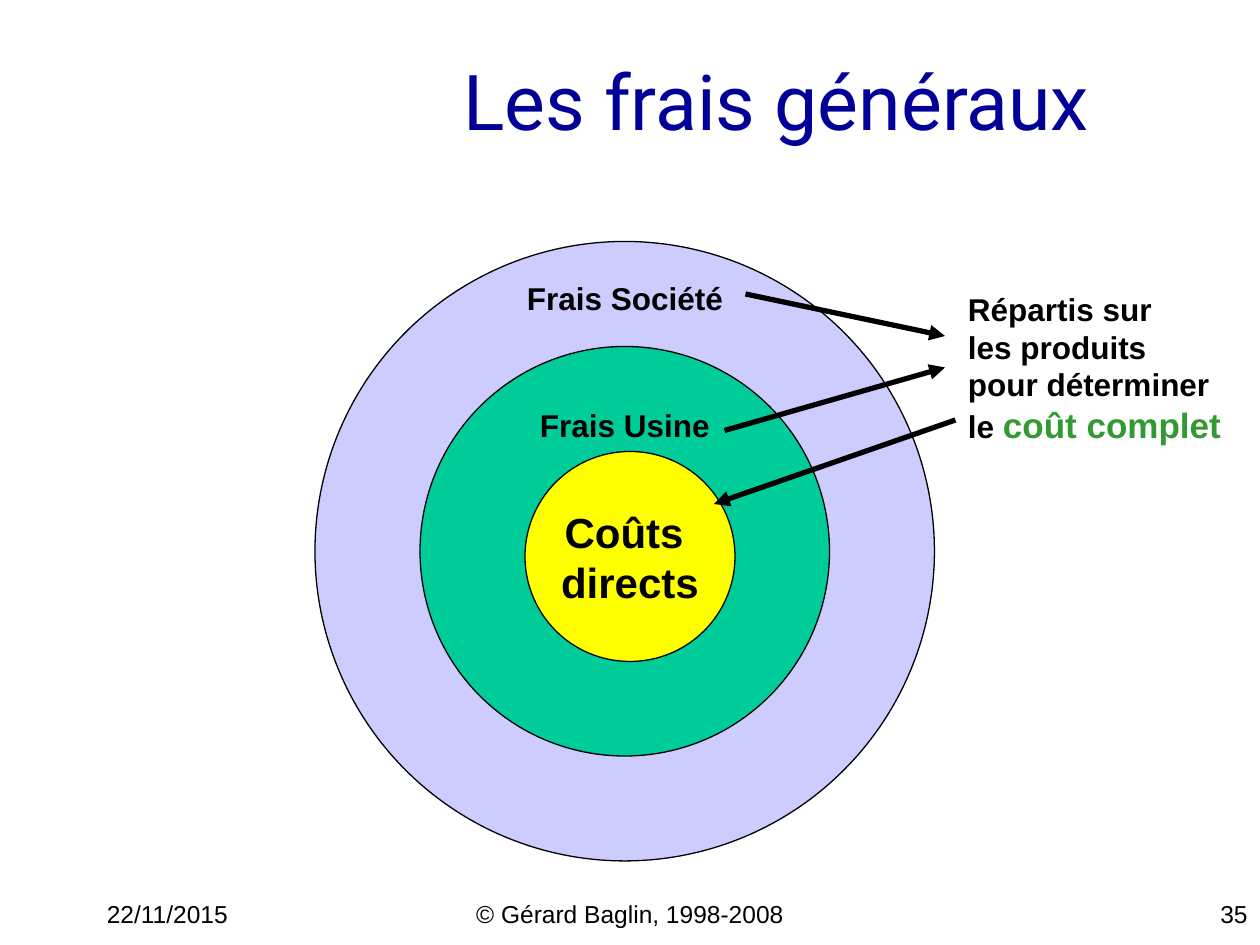
from pptx import Presentation
from pptx import util as u
from pptx.dml.color import RGBColor
from pptx.enum import shapes, text
from pptx.oxml.ns import qn
from lxml import etree

PX = u.Inches(1) // 96
COLORS = {"ink": "000000", "title": "000099", "firm": "CCCCFF",
          "plant": "00CC99", "direct": "FFFF00", "total": "339933"}
ALIGN = text.PP_ALIGN
ANCHOR = text.MSO_ANCHOR


def px(*nums):
    return [n * PX for n in nums]


def color(name):
    return RGBColor.from_string(COLORS[name])


def write(shape, lines, size=18, bold=False, font="Arial", ink="ink",
          align=ALIGN.LEFT, anchor=ANCHOR.TOP, wrap=False, grow=False, top=None):
    """Fill a shape with lines; a line is a string or a list of (text, format) runs."""
    frame = shape.text_frame
    frame.word_wrap = wrap
    frame.vertical_anchor = anchor
    if grow:
        frame.auto_size = text.MSO_AUTO_SIZE.SHAPE_TO_FIT_TEXT
    if top is not None:
        frame.margin_top = top * PX
    for i, line in enumerate(lines):
        par = frame.paragraphs[0] if i == 0 else frame.add_paragraph()
        par.alignment = align
        for words, fmt in [(line, {})] if isinstance(line, str) else line:
            for j, part in enumerate(words.split("\n")):
                if j:
                    par.add_line_break()
                run = par.add_run()
                run.text = part
                run.font.name = font
                run.font.size = u.Pt(fmt.get("size", size))
                run.font.bold = bold
                run.font.color.rgb = color(fmt.get("ink", ink))


def label(slide, box, lines, **fmt):
    write(slide.shapes.add_textbox(*px(*box)), lines, **fmt)


def disc(slide, left, top, size, fill):
    oval = slide.shapes.add_shape(shapes.MSO_SHAPE.OVAL, *px(left, top, size, size))
    oval.shadow.inherit = False
    oval.fill.solid()
    oval.fill.fore_color.rgb = color(fill)
    oval.line.color.rgb = color("ink")
    oval.line.width = u.Pt(0.75)
    return oval


def arrow(slide, start, end):
    line = slide.shapes.add_connector(shapes.MSO_CONNECTOR.STRAIGHT, *px(*start, *end))
    line.line.color.rgb = color("ink")
    line.line.width = u.Pt(3)
    etree.SubElement(line.line._get_or_add_ln(), qn("a:tailEnd"), type="triangle")
    etree.SubElement(line._element.spPr, qn("a:effectLst"))


def main():
    deck = Presentation()
    deck.slide_width, deck.slide_height = px(960, 720)
    slide = deck.slides.add_slide(deck.slide_layouts[6])

    for left, width, words, align in [
            (72, 200, "22/11/2015", ALIGN.LEFT),
            (328, 304, "© Gérard Baglin, 1998-2008", ALIGN.CENTER),
            (760, 200, "35", ALIGN.RIGHT)]:
        label(slide, (left, 680, width, 24), [words], size=14, align=align, wrap=True)
    label(slide, (24, 16, 816, 120), ["Les frais généraux"], size=44, font="Roboto",
          ink="title", align=ALIGN.RIGHT, anchor=ANCHOR.MIDDLE, wrap=True)

    disc(slide, 240, 184, 472, "firm")
    plant = disc(slide, 320, 264, 312, "plant")
    write(plant, ["Frais Usine"], bold=True, align=ALIGN.CENTER, top=0)
    direct = disc(slide, 400, 344, 160, "direct")
    write(direct, ["Coûts \ndirects"], size=24, bold=True, align=ALIGN.CENTER,
          anchor=ANCHOR.MIDDLE)

    label(slide, (392, 208, 169, 38), ["Frais Société"], bold=True, grow=True)
    label(slide, (728, 216, 212, 129),
          ["Répartis sur", "les produits", "pour déterminer",
           [("le ", {}), ("coût complet", {"size": 20, "ink": "total"})]],
          bold=True, grow=True)

    for start, end in [((568, 224), (720, 256)),
                       ((552, 328), (720, 280)),
                       ((728, 320), (544, 384))]:
        arrow(slide, start, end)

    deck.save("out.pptx")


if __name__ == "__main__":
    main()
